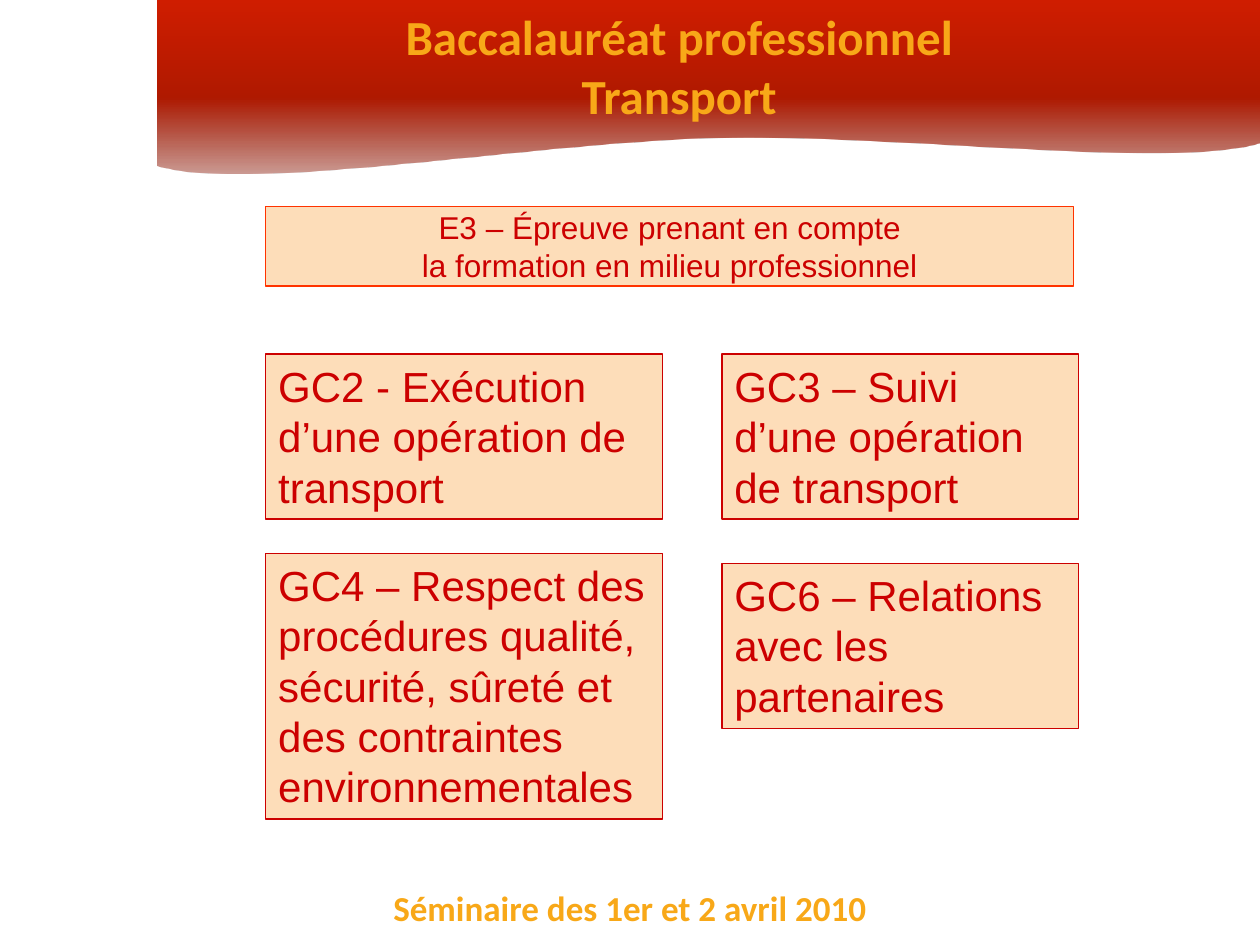
from lxml import etree
from pptx import Presentation
from pptx import util as u
from pptx.dml.color import RGBColor
from pptx.enum import shapes, text
from pptx.oxml.ns import qn

Inches = u.Inches
COLORS = {
    "gold": "F8A818",
    "peach": "FDDDB9",
    "red": "CC0000",
    "orange": "FF3300",
}
BAND_STOPS = [(0, "861300", 42), (44, "AF1900", 100), (100, "D01D00", 100)]
BAND_CURVES = [
    [(10, 1.13), (9.29, 1.34), (7.16, 1.06), (5.7, 1.09)],
    [(5.7, 1.09), (4.24, 1.12), (1.99, 1.53), (1.25, 1.31)],
]
LEFT_COLUMN = (2.11, 3.15)
RIGHT_COLUMN = (5.73, 2.83)
SKILLS = [
    (LEFT_COLUMN, 2.81, 1.31, "GC2 - Exécution d’une opération de transport"),
    (RIGHT_COLUMN, 2.81, 1.31, "GC3 – Suivi d’une opération de transport"),
    (LEFT_COLUMN, 4.39, 2.11,
     "GC4 – Respect des procédures qualité, sécurité, sûreté et des "
     "contraintes environnementales"),
    (RIGHT_COLUMN, 4.47, 1.31, "GC6 – Relations avec les partenaires"),
]


def rgb(name):
    return RGBColor.from_string(COLORS[name])


def place(sp, box):
    sp.left, sp.top, sp.width, sp.height = (Inches(v) for v in box)


def write(tf, lines, size, font, color, bold=False,
          align=text.PP_ALIGN.CENTER, anchor=text.MSO_ANCHOR.TOP):
    tf.vertical_anchor = anchor
    for i, line in enumerate(lines):
        p = tf.paragraphs[0] if i == 0 else tf.add_paragraph()
        p.alignment = align
        p.space_before = u.Pt(0)
        r = p.add_run()
        r.text = line
        r.font.size = u.Pt(size)
        r.font.name = font
        r.font.bold = bold
        r.font.color.rgb = rgb(color)


def curve_points(curve, steps=40):
    for i in range(1, steps + 1):
        t = i / steps
        weights = ((1 - t) ** 3, 3 * t * (1 - t) ** 2, 3 * t * t * (1 - t), t ** 3)
        yield tuple(sum(w * pt[axis] for w, pt in zip(weights, curve))
                    for axis in (0, 1))


def set_gradient(sp, stops, angle):
    sp.fill.gradient()
    grad = sp._element.spPr.find(qn("a:gradFill"))
    for child in list(grad):
        grad.remove(child)
    gs_list = etree.SubElement(grad, qn("a:gsLst"))
    for pos, color, alpha in stops:
        gs = etree.SubElement(gs_list, qn("a:gs"), pos=str(pos * 1000))
        clr = etree.SubElement(gs, qn("a:srgbClr"), val=color)
        etree.SubElement(clr, qn("a:alpha"), val=str(alpha * 1000))
    etree.SubElement(grad, qn("a:lin"), ang=str(angle * 60000), scaled="0")


def add_band(s):
    points = [(10, 0), BAND_CURVES[0][0]]
    for curve in BAND_CURVES:
        points.extend(curve_points(curve))
    builder = s.shapes.build_freeform(Inches(1.25), 0)
    builder.add_line_segments([(Inches(x), Inches(y)) for x, y in points])
    sp = builder.convert_to_shape()
    sp.shadow.inherit = False
    sp.line.fill.background()
    set_gradient(sp, BAND_STOPS, 270)


def add_title(s, box):
    sp = s.shapes.title
    place(sp, box)
    s.shapes._spTree.append(sp._element)
    tf = sp.text_frame
    tf.word_wrap = True
    tf.auto_size = text.MSO_AUTO_SIZE.NONE
    write(tf, ["Baccalauréat professionnel", "Transport"],
          28, "Calibri", "gold", bold=True)


def add_footer(s, box):
    tf = s.shapes.add_textbox(*(Inches(v) for v in box)).text_frame
    tf.word_wrap = True
    write(tf, ["Séminaire des 1er et 2 avril 2010"],
          20, "Calibri", "gold", bold=True)


def add_panel(s, box, line):
    sp = s.shapes.add_shape(shapes.MSO_SHAPE.RECTANGLE, *(Inches(v) for v in box))
    sp.shadow.inherit = False
    sp.fill.solid()
    sp.fill.fore_color.rgb = rgb("peach")
    sp.line.color.rgb = rgb(line)
    sp.line.width = u.Pt(0.75)
    return sp.text_frame


def add_exam(s, box):
    tf = add_panel(s, box, "orange")
    tf.word_wrap = False
    write(tf, ["E3 – Épreuve prenant en compte", "la formation en milieu professionnel"],
          18, "Arial", "red", anchor=text.MSO_ANCHOR.MIDDLE)


def add_skill(s, box, label):
    tf = add_panel(s, box, "red")
    tf.word_wrap = True
    write(tf, [label], 24, "Arial", "red", align=text.PP_ALIGN.LEFT)


def main():
    prs = Presentation()
    prs.slide_width, prs.slide_height = Inches(10), Inches(7.5)
    s = prs.slides.add_slide(prs.slide_layouts[5])
    add_footer(s, (2.5, 6.99, 5, 0.44))
    add_band(s)
    add_title(s, (2.89, 0, 5, 1.04))
    for (left, width), top, height, label in SKILLS:
        add_skill(s, (left, top, width, height), label)
    add_exam(s, (2.11, 1.64, 6.41, 0.63))
    prs.save("out.pptx")


if __name__ == "__main__":
    main()
